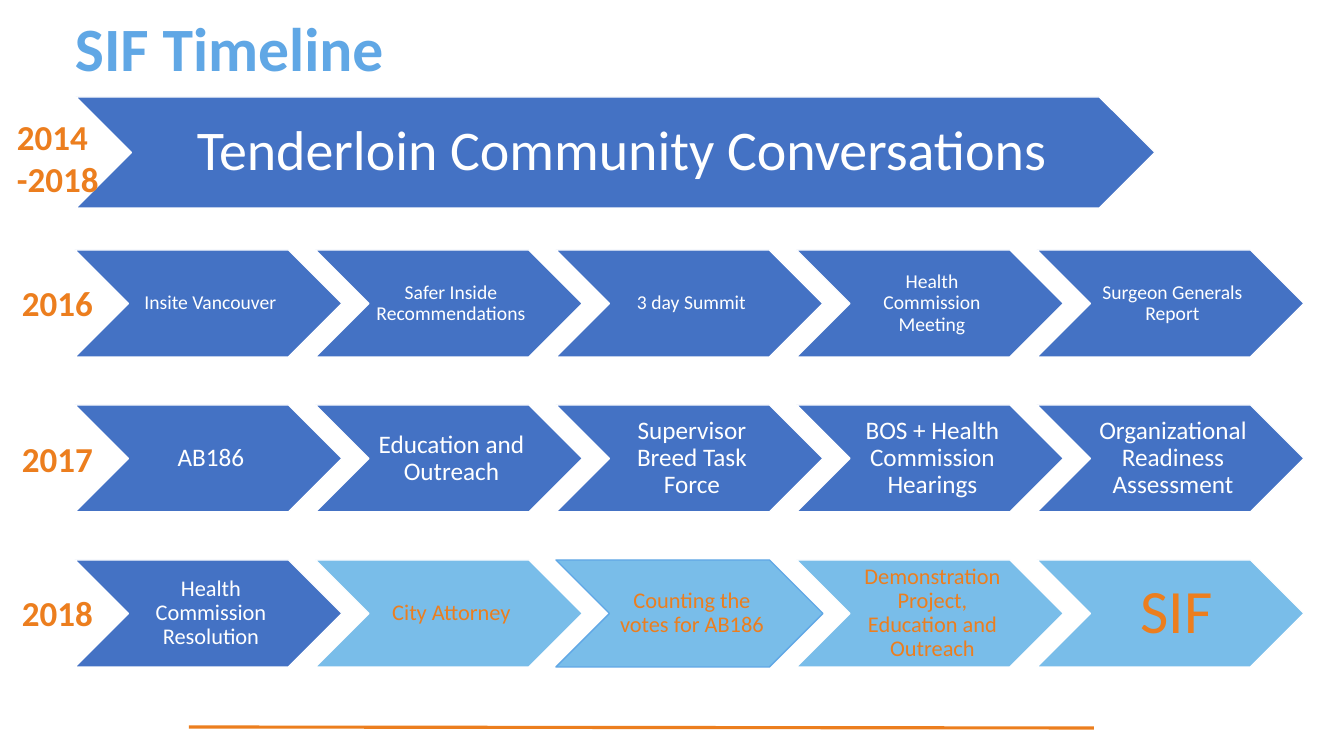
from lxml import etree
from pptx import Presentation
from pptx.dml.color import RGBColor
from pptx.enum.shapes import MSO_CONNECTOR, MSO_SHAPE
from pptx.enum.text import MSO_ANCHOR, PP_ALIGN
from pptx.oxml.ns import qn
from pptx.util import Pt

BLUE = RGBColor(0x44, 0x72, 0xC4)
SKY = RGBColor(0x79, 0xBD, 0xE9)
AZURE = RGBColor(0x60, 0xA7, 0xE5)
ORANGE = RGBColor(0xEC, 0x7E, 0x1E)
WHITE = RGBColor(0xFF, 0xFF, 0xFF)
CHEVRON, LINE = MSO_SHAPE.CHEVRON, MSO_CONNECTOR.STRAIGHT
TOP, MIDDLE, BOTTOM = MSO_ANCHOR.TOP, MSO_ANCHOR.MIDDLE, MSO_ANCHOR.BOTTOM
LEFT, CENTER = PP_ALIGN.LEFT, PP_ALIGN.CENTER
FONT = "Calibri"

# Content: a step is text, size, fill, font colour, edge
TITLE = "SIF Timeline"
BANNER = ("Tenderloin Community Conversations", 40, BLUE, WHITE, WHITE)
SPAN = "2014 -2018"


def plain(size, *names):
    return [(name, size, BLUE, WHITE, WHITE) for name in names]


# Year, top of its label, steps
ROWS = [
    ("2016", 277, plain(14, "Insite Vancouver", "Safer Inside Recommendations",
                        "3 day Summit", "Health Commission Meeting",
                        "Surgeon Generals Report")),
    ("2017", 433, plain(18, "AB186", "Education and Outreach",
                        "Supervisor Breed Task Force",
                        "BOS + Health Commission Hearings",
                        "Organizational Readiness Assessment")),
    ("2018", 587, plain(16, "Health Commission Resolution") + [
        ("City Attorney", 16, SKY, ORANGE, WHITE),
        ("Counting the votes for AB186", 16, SKY, ORANGE, AZURE),
        ("Demonstration Project, Education and Outreach", 16, SKY, ORANGE, WHITE),
        ("SIF", 44, SKY, ORANGE, WHITE)]),
]

# Layout in px
X0, Y0 = 75, 250
STEP_X, STEP_Y = 240.5, 155
STEP_W, STEP_H = 267, 107


def px(n):
    return round(n * 914400 / 100.8)


deck = Presentation()
deck.slide_width, deck.slide_height = px(1344), px(756)
slide = deck.slides.add_slide(deck.slide_layouts[6])
shapes = slide.shapes


def write(shape, text, size, color, align, anchor, pads, bold=False, space=1):
    frame = shape.text_frame
    frame.word_wrap = True
    frame.vertical_anchor = anchor
    side, rest = pads
    frame.margin_left = px(side)
    frame.margin_right = px(rest if align == CENTER else side)
    frame.margin_top = frame.margin_bottom = px(rest)
    para = frame.paragraphs[0]
    para.text = text
    para.alignment = align
    para.line_spacing = space
    font = para.font
    font.name, font.size, font.bold = FONT, Pt(size), bold
    font.color.rgb = color


def step(box, item):
    text, size, fill, color, edge = item
    shape = shapes.add_shape(CHEVRON, *map(px, box))
    shape.shadow.inherit = False
    shape.fill.solid()
    shape.fill.fore_color.rgb = fill
    shape.line.color.rgb = edge
    shape.line.width = Pt(1)
    pads = round(size * 0.44), round(size * 0.15)
    write(shape, text, size, color, CENTER, MIDDLE, pads, space=0.9)


def label(box, text):
    shape = shapes.add_textbox(*map(px, box))
    write(shape, text, 25, ORANGE, LEFT, TOP, (10, 5), bold=True)


# Rule at the foot
rule = shapes.add_connector(LINE, px(189), px(727), px(1094), px(728))
rule.line.color.rgb = ORANGE
rule.line.width = Pt(2.25)
etree.SubElement(rule._element.spPr, qn("a:effectLst"))

# Yearly steps
for row, (year, top, steps) in enumerate(ROWS):
    for col, item in enumerate(steps):
        step((X0 + col * STEP_X, Y0 + row * STEP_Y, STEP_W, STEP_H), item)
    label((12, top, 91, 52), year)

# Banner over all years
step((76, 97, 1079, 111), BANNER)
label((7, 111, 135, 95), SPAN)

# Title
head = shapes.add_textbox(px(X0), px(-3), px(863), px(88))
write(head, TITLE, 44, AZURE, LEFT, BOTTOM, (0, 0), bold=True, space=0.9)

deck.save("out.pptx")
